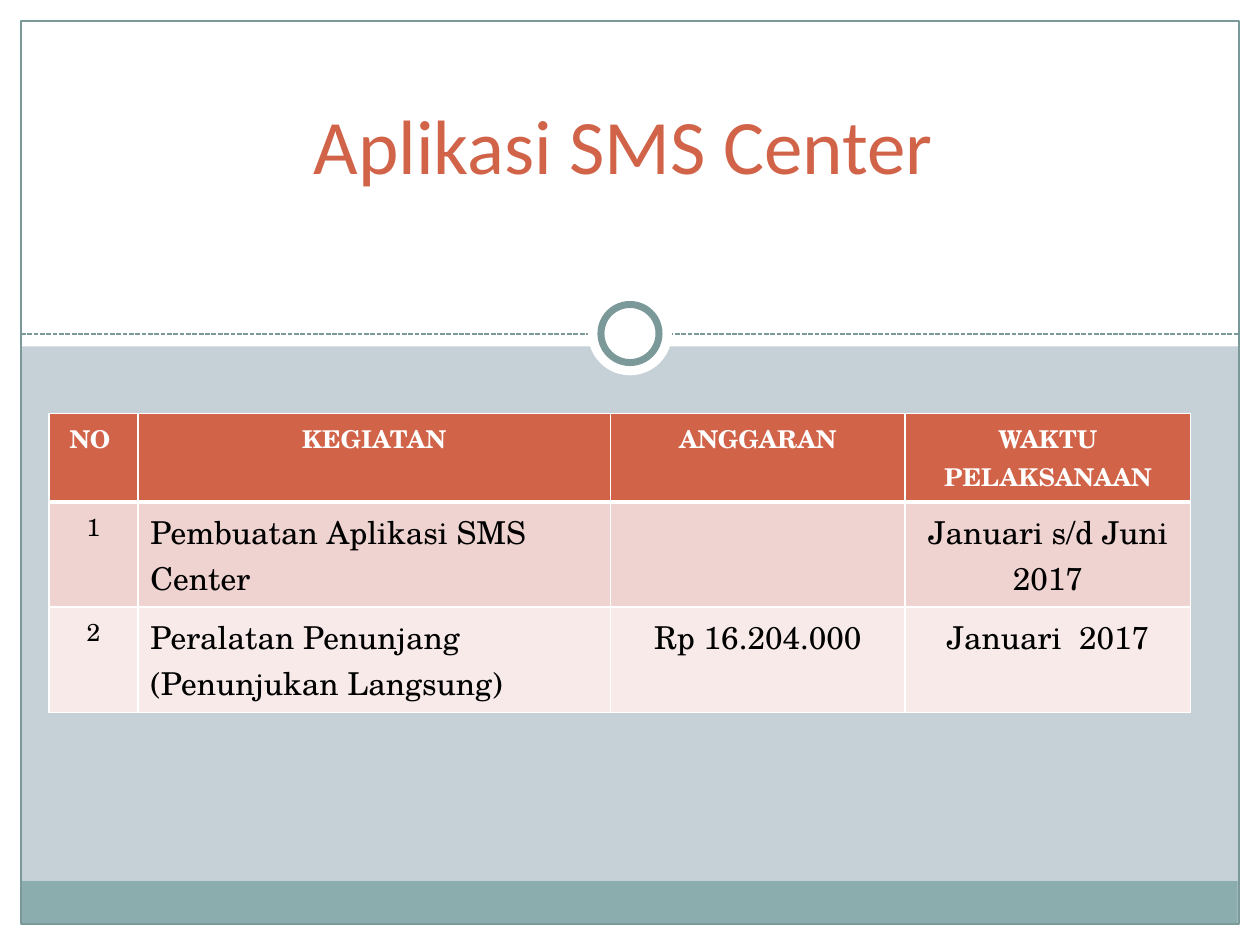
from dataclasses import dataclass
from typing import Optional

from lxml.etree import SubElement
from pptx import Presentation
from pptx.dml.color import RGBColor
from pptx.enum.dml import MSO_LINE_DASH_STYLE as Dash
from pptx.enum.shapes import MSO_CONNECTOR as Connector, MSO_SHAPE as Shape
from pptx.enum.text import MSO_ANCHOR as Anchor, MSO_AUTO_SIZE as AutoSize, PP_ALIGN as Align
from pptx.oxml import parse_xml
from pptx.oxml.ns import nsdecls, qn
from pptx.util import Pt

WHITE, BLACK, ORANGE = "FFFFFF", "000000", "D16349"
TEAL, PALE_TEAL, PAGE_BLUE = "7C999A", "8CADAE", "C5D1D7"
BODY_FONT = "TeX Gyre Schola"
WIDTH, HEIGHT, EDGE = 720, 540, 12


@dataclass
class Part:
    left: float
    top: float
    width: float
    height: float
    fill: Optional[str] = None
    line: Optional[str] = None
    weight: float = 0
    kind: Shape = Shape.RECTANGLE


@dataclass
class RowStyle:
    fill: str
    color: str
    sizes: tuple[int, ...]
    aligns: tuple[Align, ...]
    bold: bool
    bottom_weight: float


def color(value: str) -> RGBColor:
    return RGBColor.from_string(value)


def paint(target, value: str) -> None:
    target.solid()
    target.fore_color.rgb = color(value)


def format_font(font, value: str, **formats) -> None:
    for name, setting in formats.items():
        setattr(font, name, setting)
    font.color.rgb = color(value)


def draw_part(page, part: Part) -> None:
    box = page.shapes.add_shape(
        part.kind, Pt(part.left), Pt(part.top), Pt(part.width), Pt(part.height))
    box.shadow.inherit = False
    if part.fill:
        paint(box.fill, part.fill)
    else:
        box.fill.background()
    if part.line:
        paint(box.line.fill, part.line)
        box.line.width = Pt(part.weight)
    else:
        box.line.fill.background()


def draw_divider(page, y: float) -> None:
    divider = page.shapes.add_connector(
        Connector.STRAIGHT, Pt(EDGE), Pt(y), Pt(WIDTH - EDGE), Pt(y))
    paint(divider.line.fill, TEAL)
    divider.line.width = Pt(0.9)
    divider.line.dash_style = Dash.SQUARE_DOT
    SubElement(divider.element.spPr, qn("a:effectLst"))


def add_borders(cell, bottom_weight: float) -> None:
    properties = cell._tc.get_or_add_tcPr()
    weights = {"lnL": 1, "lnR": 1, "lnT": 1, "lnB": bottom_weight}
    for index, (side, weight) in enumerate(weights.items()):
        properties.insert(index, parse_xml(
            f'<a:{side} {nsdecls("a")} w="{Pt(weight)}"><a:solidFill>'
            f'<a:srgbClr val="{WHITE}"/></a:solidFill></a:{side}>'))


def fill_row(cells, texts: tuple[str, ...], style: RowStyle) -> None:
    for cell, text, size, align in zip(cells, texts, style.sizes, style.aligns):
        paint(cell.fill, style.fill)
        add_borders(cell, style.bottom_weight)
        para = cell.text_frame.paragraphs[0]
        para.alignment = align
        if text:
            span = para.add_run()
            span.text = text
            format_font(span.font, style.color, name=BODY_FONT,
                        size=Pt(size), bold=style.bold)


# Page
deck = Presentation()
deck.slide_width, deck.slide_height = Pt(WIDTH), Pt(HEIGHT)
page = deck.slides.add_slide(deck.slide_layouts[0])
paint(page.background.fill, PAGE_BLUE)
title, subtitle = page.placeholders
subtitle.element.getparent().remove(subtitle.element)

# White margins, top panel and footer band
for part in (
    Part(0, HEIGHT - EDGE, WIDTH, EDGE, WHITE),
    Part(WIDTH - EDGE, 0, EDGE, HEIGHT, WHITE),
    Part(0, 0, EDGE, HEIGHT, WHITE),
    Part(0, 0, WIDTH, 198, WHITE),
    Part(11.75, 503.5, 695.5, 24.5, PALE_TEAL),
):
    draw_part(page, part)

# Divider, frame and ring
draw_divider(page, 190.8)
for part in (
    Part(EDGE, EDGE, WIDTH - 2 * EDGE, HEIGHT - 2 * EDGE, line=TEAL, weight=0.75),
    Part(336, 166.5, 48, 48, WHITE, kind=Shape.OVAL),
    Part(343.4, 174, 33.2, 33.2, WHITE, TEAL, 4, Shape.OVAL),
):
    draw_part(page, part)

# Title, brought in front of the top panel
title.element.getparent().append(title.element)
title.left, title.top, title.width, title.height = Pt(50.4), Pt(33.8), Pt(612), Pt(78.5)
frame = title.text_frame
frame.text = "Aplikasi SMS Center"
frame.word_wrap = True
frame.auto_size = AutoSize.NONE
frame.vertical_anchor = Anchor.BOTTOM
para = frame.paragraphs[0]
for name, setting in {"alignment": Align.CENTER, "line_spacing": 1.15,
                      "space_after": Pt(10)}.items():
    setattr(para, name, setting)
format_font(para.runs[0].font, ORANGE, name="Calibri", size=Pt(44))

# Activity table
COLUMNS = (50.7, 270, 168.5, 163.1)
ROW_HEIGHT = 34.6
CENTERED = (Align.CENTER,) * 4
BODY_ALIGNS = (Align.CENTER, Align.LEFT, Align.CENTER, Align.CENTER)
BODY_SIZES = (14, 18, 18, 18)
ROWS = (
    (("NO ", "KEGIATAN", "ANGGARAN", "WAKTU PELAKSANAAN"),
     RowStyle(ORANGE, WHITE, (14,) * 4, CENTERED, True, 3)),
    (("1", "Pembuatan Aplikasi SMS Center", "", "Januari s/d Juni 2017"),
     RowStyle("EED3D0", BLACK, BODY_SIZES, BODY_ALIGNS, False, 1)),
    (("2", "Peralatan Penunjang (Penunjukan Langsung)", "Rp 16.204.000", "Januari  2017"),
     RowStyle("F7EAE9", BLACK, BODY_SIZES, BODY_ALIGNS, False, 1)),
)
table = page.shapes.add_table(
    len(ROWS), len(COLUMNS), Pt(28.1), Pt(236.2),
    Pt(sum(COLUMNS)), Pt(ROW_HEIGHT * len(ROWS))).table
for column, width in zip(table.columns, COLUMNS):
    column.width = Pt(width)
for row, (texts, style) in zip(table.rows, ROWS):
    fill_row(row.cells, texts, style)

deck.save("out.pptx")
